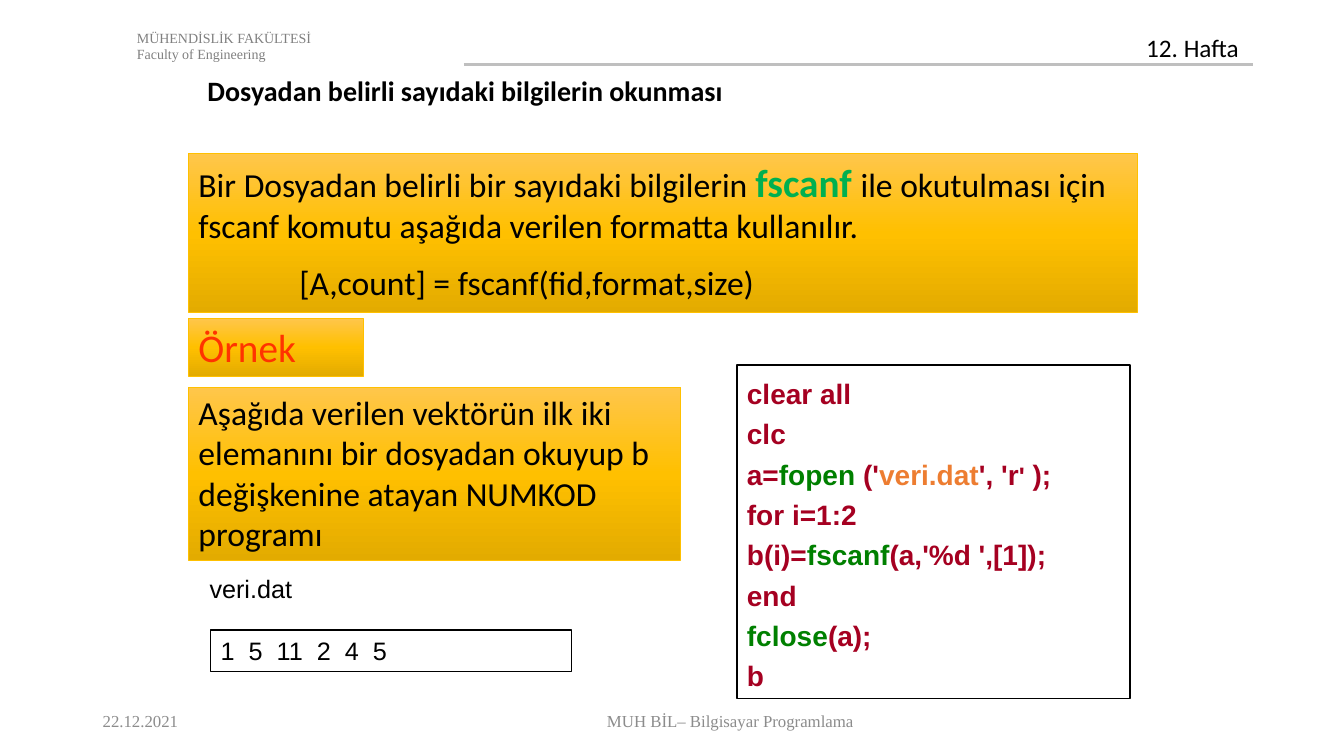
from copy import deepcopy

from lxml import etree
from pptx import Presentation
from pptx import util as u
from pptx.dml.color import RGBColor
from pptx.enum import shapes, text
from pptx.oxml.ns import qn

colour = RGBColor.from_string
BLACK, RED, GREEN, GREY = "000000", "A50021", "008000", "8C8C8C"
GOLD = [(0, "FFC64B"), (0.5, "FFC000"), (1, "E3AB00")]


def write(para, words, size=18, color=BLACK, font="Calibri", bold=False):
    span = para.add_run()
    span.text = words
    span.font.size = u.Pt(size)
    span.font.name = font
    span.font.bold = bold
    span.font.color.rgb = colour(color)


def add_box(left, top, width, height, gold=False, outline=None):
    place = [u.Inches(n) for n in (left, top, width, height)]
    if gold or outline:
        box = page.shapes.add_shape(shapes.MSO_SHAPE.RECTANGLE, *place)
        box.shadow.inherit = False
        box.line.color.rgb = colour(outline or "FFC000")
        box.line.width = u.Pt(0.5 if gold else 1)
        box.fill.background()
    else:
        box = page.shapes.add_textbox(*place)
    if gold:
        box.fill.gradient()
        box.fill.gradient_angle = 270
        first = box.fill.gradient_stops[0]._gs
        first.addnext(deepcopy(first))
        for stop, (position, shade) in zip(box.fill.gradient_stops, GOLD):
            stop.position = position
            stop.color.rgb = colour(shade)
    frame = box.text_frame
    frame.word_wrap = True
    frame.vertical_anchor = text.MSO_ANCHOR.TOP
    frame.paragraphs[0].alignment = text.PP_ALIGN.LEFT
    return frame


deck = Presentation()
deck.slide_width, deck.slide_height = u.Inches(13.33), u.Inches(7.5)
page = deck.slides.add_slide(deck.slide_layouts[6])

rule = page.shapes.add_connector(
    shapes.MSO_CONNECTOR.STRAIGHT,
    u.Inches(4.6), u.Inches(0.64), u.Inches(12.43), u.Inches(0.64))
rule.line.color.rgb = colour("BFBFBF")
rule.line.width = u.Pt(1.5)
etree.SubElement(rule._element.spPr, qn("a:effectLst"))

faculty = add_box(1.26, 0.24, 6.67, 0.44)
write(faculty.paragraphs[0], "MÜHENDİSLİK FAKÜLTESİ", 10, "808080", "Times New Roman")
write(faculty.add_paragraph(), "Faculty of Engineering", 10, "808080", "Times New Roman")

week = add_box(11.27, 0.27, 1.15, 0.4)
write(week.paragraphs[0], "12. Hafta")

title = add_box(1.96, 0.68, 7.26, 0.44)
write(title.paragraphs[0], "Dosyadan belirli sayıdaki bilgilerin okunması", 20, bold=True)

usage = add_box(1.87, 1.52, 9.41, 1.58, gold=True)
para = usage.paragraphs[0]
write(para, "Bir Dosyadan belirli bir sayıdaki bilgilerin ", 24)
write(para, "fscanf ", 28, "00B050", bold=True)
write(para, "ile okutulması için fscanf komutu aşağıda verilen formatta kullanılır.", 24)
para = usage.add_paragraph()
para.alignment = text.PP_ALIGN.LEFT
para.space_before = u.Pt(12)
para._p.get_or_add_pPr().set("marL", str(u.Inches(1)))
write(para, "[A,count] = fscanf(fid,format,size)", 24)

example = add_box(1.87, 3.16, 1.73, 0.57, gold=True)
write(example.paragraphs[0], "Örnek", 28, "FF3300")

task = add_box(1.87, 3.84, 4.88, 1.72, gold=True)
write(task.paragraphs[0],
      "Aşağıda verilen vektörün ilk iki elemanını bir dosyadan okuyup b "
      "değişkenine atayan NUMKOD programı", 24)

file_name = add_box(1.98, 5.64, 1.53, 0.4)
write(file_name.paragraphs[0], "veri.dat", font="Arial")

file_data = add_box(2.09, 6.25, 3.58, 0.41, outline=BLACK)
write(file_data.paragraphs[0], "1  5  11  2  4  5", font="Arial")

code_lines = [
    [("clear all", RED, 20)],
    [("clc", RED, 20)],
    [("a=", RED, 20), ("fopen", GREEN, 20), (" ('", RED, 20), ("veri.dat", "ED7D31", 20),
     ("', 'r", RED, 20), ("'", RED, 18), (" );", RED, 20)],
    [("for i=1:2", RED, 20)],
    [("b(i)=", RED, 20), ("fscanf", GREEN, 20), ("(a,'%d ',[1]);", RED, 20)],
    [("end", RED, 20)],
    [("fclose", GREEN, 20), ("(a);", RED, 20)],
    [("b", RED, 20)],
]
code = add_box(7.31, 3.62, 3.9, 3.31, outline=BLACK)
for number, pieces in enumerate(code_lines):
    para = code.add_paragraph() if number else code.paragraphs[0]
    para.alignment = text.PP_ALIGN.LEFT
    para.line_spacing = 1.2
    for words, color, size in pieces:
        write(para, words, size, color, "Arial", bold=True)

for left, width, words, alignment in [
    (0.92, 1.57, "22.12.2021", text.PP_ALIGN.LEFT),
    (2.73, 9.03, "MUH BİL– Bilgisayar Programlama", text.PP_ALIGN.CENTER),
]:
    footer = add_box(left, 6.95, width, 0.4)
    footer.vertical_anchor = text.MSO_ANCHOR.MIDDLE
    footer.paragraphs[0].alignment = alignment
    write(footer.paragraphs[0], words, 12, GREY, "Times New Roman")

deck.save("out.pptx")
